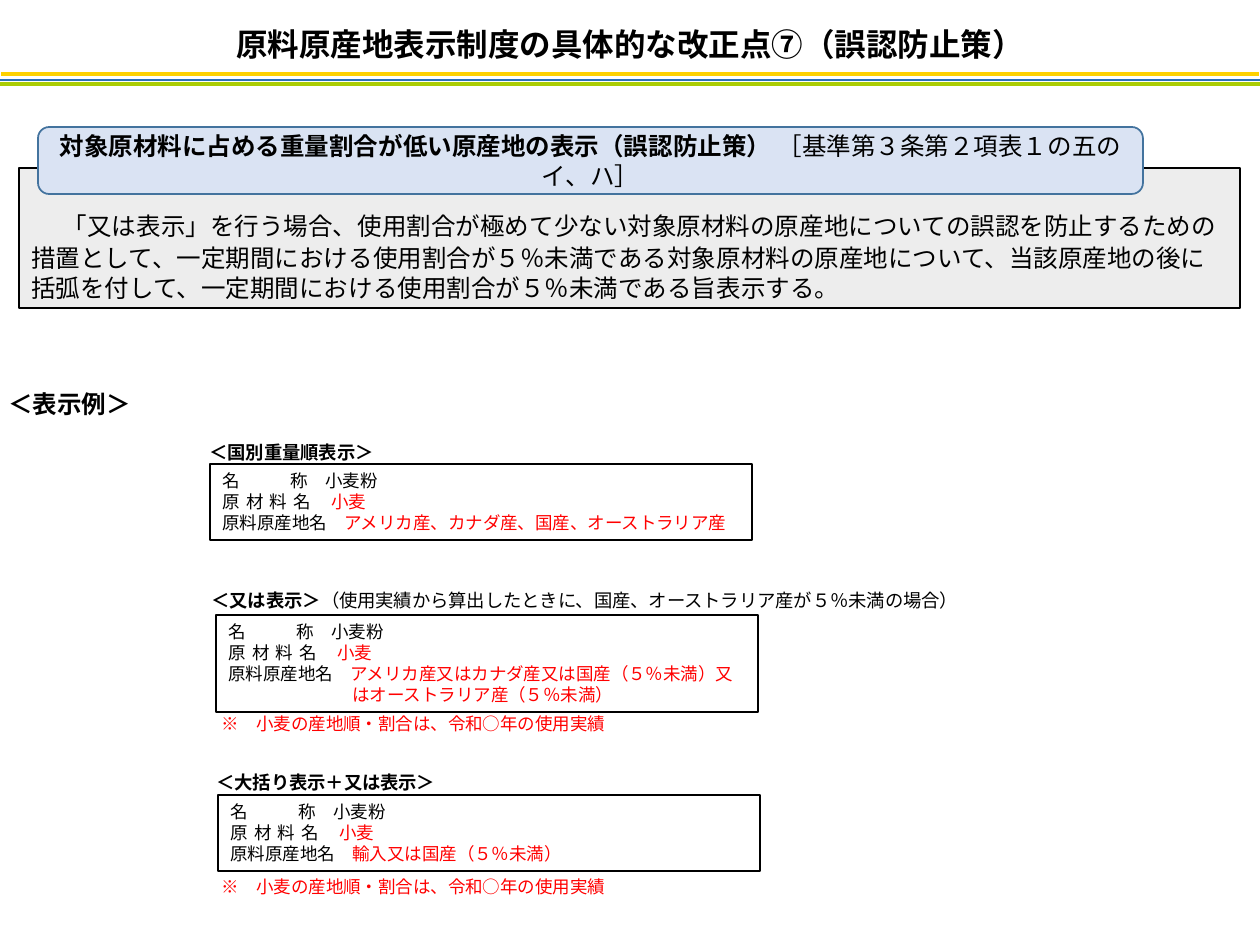
from dataclasses import dataclass, field
from typing import Optional

from lxml.etree import SubElement
from pptx import Presentation
from pptx.dml.color import RGBColor
from pptx.enum.shapes import MSO_CONNECTOR as Connector, MSO_SHAPE as Shape
from pptx.enum.text import MSO_ANCHOR as Anchor, MSO_AUTO_SIZE as AutoSize, PP_ALIGN as Align
from pptx.oxml.ns import qn
from pptx.util import Emu, Pt

SCALE = 914400 / 126
COLORS = {
    "black": "000000", "white": "FFFFFF", "red": "FF0000", "green": "00B050",
    "panel": "EDEDED", "banner": "DAE3F3", "banner_line": "43739E",
    "stripe_yellow": "FDD100", "stripe_blue": "2B71B7", "stripe_green": "ABCD05",
}
JAPANESE = "Noto Sans CJK JP"


@dataclass
class Run:
    text: str
    size: float
    font: str = "Calibri"
    color: str = "black"
    bold: bool = False
    spacing: int = 0


@dataclass
class Line:
    runs: list[Run]
    leading: float
    hanging: int = 0
    tab: int = 0


@dataclass
class Box:
    left: int
    top: int
    width: int
    height: int
    lines: list[Line]
    kind: Optional[Shape] = None
    fill: Optional[str] = None
    border: Optional[str] = None
    border_width: float = 1
    frame: dict = field(default_factory=dict)
    align: Align = Align.LEFT


@dataclass
class Example:
    left: int
    top: int
    height: int
    label_left: int
    label_top: int
    label_width: int
    label: list[Run]
    origin: str
    hanging: int
    note_top: Optional[int] = None


def px(value: int) -> Emu:
    return Emu(round(value * SCALE))


def rgb(name: str) -> RGBColor:
    return RGBColor.from_string(COLORS[name])


def write_line(paragraph, line: Line, align: Align) -> None:
    for name, value in {"alignment": align, "line_spacing": Pt(line.leading)}.items():
        setattr(paragraph, name, value)
    properties = paragraph._p.get_or_add_pPr()
    if line.hanging:
        properties.set("marL", str(px(line.hanging)))
        properties.set("indent", str(-px(line.hanging)))
    if line.tab:
        tabs = SubElement(properties, qn("a:tabLst"))
        SubElement(tabs, qn("a:tab"), pos=str(px(line.tab)), algn="l")
    for item in line.runs:
        run = paragraph.add_run()
        run.text = item.text
        for name, value in {"name": item.font, "size": Pt(item.size), "bold": item.bold}.items():
            setattr(run.font, name, value)
        run.font.color.rgb = rgb(item.color)
        run_properties = run._r.get_or_add_rPr()
        run_properties.set("lang", "ja-JP")
        if item.spacing:
            run_properties.set("spc", str(item.spacing))
        SubElement(run_properties, qn("a:ea"), typeface=JAPANESE)


def draw_box(slide, box: Box) -> None:
    place = [px(value) for value in (box.left, box.top, box.width, box.height)]
    if box.kind is None:
        shape = slide.shapes.add_textbox(*place)
    else:
        shape = slide.shapes.add_shape(box.kind, *place)
        shape.shadow.inherit = False
        if box.fill:
            shape.fill.solid()
            shape.fill.fore_color.rgb = rgb(box.fill)
        else:
            shape.fill.background()
        shape.line.color.rgb = rgb(box.border)
        shape.line.width = Pt(box.border_width)
    frame = shape.text_frame
    formats = {"word_wrap": True, "auto_size": AutoSize.NONE, "vertical_anchor": Anchor.TOP}
    for name, value in (formats | box.frame).items():
        setattr(frame, name, value)
    for index, line in enumerate(box.lines):
        paragraph = frame.add_paragraph() if index else frame.paragraphs[0]
        write_line(paragraph, line, box.align)


def draw_stripe(slide, y: int, color: str) -> None:
    stripe = slide.shapes.add_connector(Connector.STRAIGHT, 0, px(y), px(1260), px(y))
    stripe.line.color.rgb = rgb(color)
    stripe.line.width = Pt(2)
    SubElement(stripe._element.spPr, qn("a:effectLst"))


def label_text(run: Run) -> Line:
    return Line([run], run.size * 1.22)


def draw_example(slide, example: Example) -> None:
    def entry(text: str, color: str = "black", spacing: int = 0) -> Run:
        return Run(text, 10, JAPANESE, color, spacing=spacing)

    lines = [
        Line([entry("名\t称　小麦粉")], 12, tab=68),
        Line([entry("原 材 料 名　", spacing=70), entry("小麦", "red")], 12, 74),
        Line([entry("原料原産地名　"), entry(example.origin, "red")], 12, example.hanging),
    ]
    draw_box(slide, Box(example.left, example.top, 542, example.height, lines,
                        Shape.RECTANGLE, "white", "black"))
    draw_box(slide, Box(example.label_left, example.label_top, example.label_width, 35,
                        [Line(example.label, 12.8)]))
    if example.note_top:
        note = Run("※　小麦の産地順・割合は、令和○年の使用実績", 10, "Arial", "red")
        draw_box(slide, Box(209, example.note_top, 510, 34, [label_text(note)]))


BODY = [
    Run("　", 18, color="green"),
    Run("「又は表示」を行う場合、", 14),
    Run("使用割合が極めて少ない対象原材料の原産地についての誤認を防止するための措置として、"
        "一定期間における使用割合が５％未満である対象原材料の原産地について、当該原産地の後に"
        "括弧を付して、一定期間における使用割合が５％未満である旨表示する。", 14, "Arial"),
]
BANNER = [
    Run("対象原材料に占める重量割合が低い原産地の表示（誤認防止策）", 14, bold=True),
    Run(" ［", 14),
    Run("基準第３条第２項表１の五のイ、ハ］", 14, "Arial"),
]
TITLE = Run("原料原産地表示制度の具体的な改正点⑦（誤認防止策）", 18, bold=True)
MIDDLE = {"vertical_anchor": Anchor.MIDDLE}
BOXES = [
    Box(19, 168, 1221, 140, [Line(BODY, 17.5)], Shape.RECTANGLE, "panel", "black", 0.75,
        {"margin_top": px(43)}),
    Box(38, 127, 1105, 67, [Line(BANNER, 17)], Shape.ROUNDED_RECTANGLE, "banner", "banner_line",
        frame=MIDDLE, align=Align.CENTER),
    Box(0, 9, 1260, 69, [label_text(TITLE)], Shape.RECTANGLE, None, "white",
        frame=MIDDLE | {"word_wrap": False}, align=Align.CENTER),
    Box(-4, 382, 389, 43, [label_text(Run("＜表示例＞", 14, bold=True))]),
]
STRIPES = {74: "stripe_yellow", 79: "stripe_blue", 84: "stripe_green"}
EXAMPLES = [
    Example(210, 464, 76, 197, 435, 252, [Run("＜国別重量順表示＞", 10.5, bold=True)],
            "アメリカ産、カナダ産、国産、オーストラリア産", 124),
    Example(216, 615, 97, 199, 583, 795,
            [Run("＜又は表示＞", 10.5, bold=True),
             Run("（使用実績から算出したときに、国産、オーストラリア産が５％未満の場合）", 10.5)],
            "アメリカ産又はカナダ産又は国産（５％未満）又はオーストラリア産（５％未満）", 124, 707),
    Example(218, 795, 76, 204, 765, 305, [Run("＜大括り表示＋又は表示＞", 10.5, bold=True)],
            "輸入又は国産（５％未満）", 74, 869),
]


def main() -> None:
    presentation = Presentation()
    presentation.slide_width, presentation.slide_height = px(1260), px(945)
    slide = presentation.slides.add_slide(presentation.slide_layouts[6])
    for y, color in STRIPES.items():
        draw_stripe(slide, y, color)
    for box in BOXES:
        draw_box(slide, box)
    for example in EXAMPLES:
        draw_example(slide, example)
    presentation.save("out.pptx")


if __name__ == "__main__":
    main()
